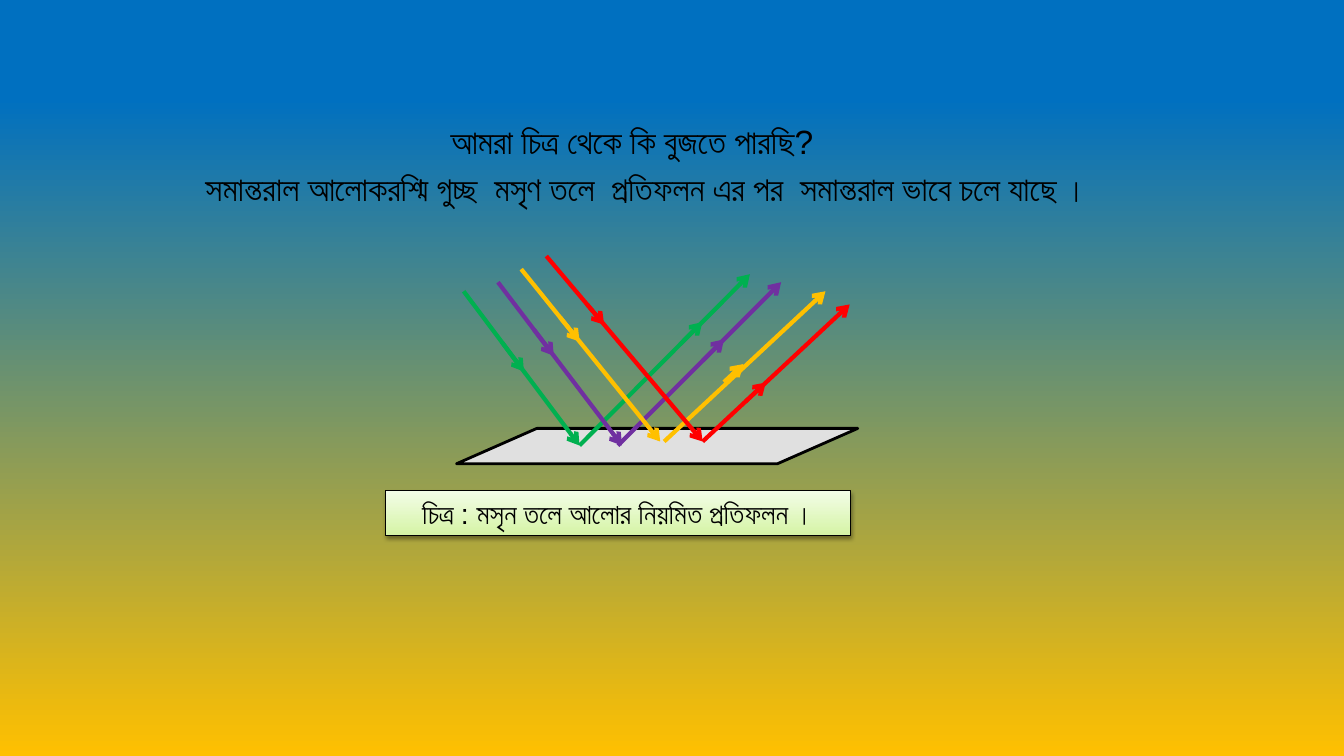
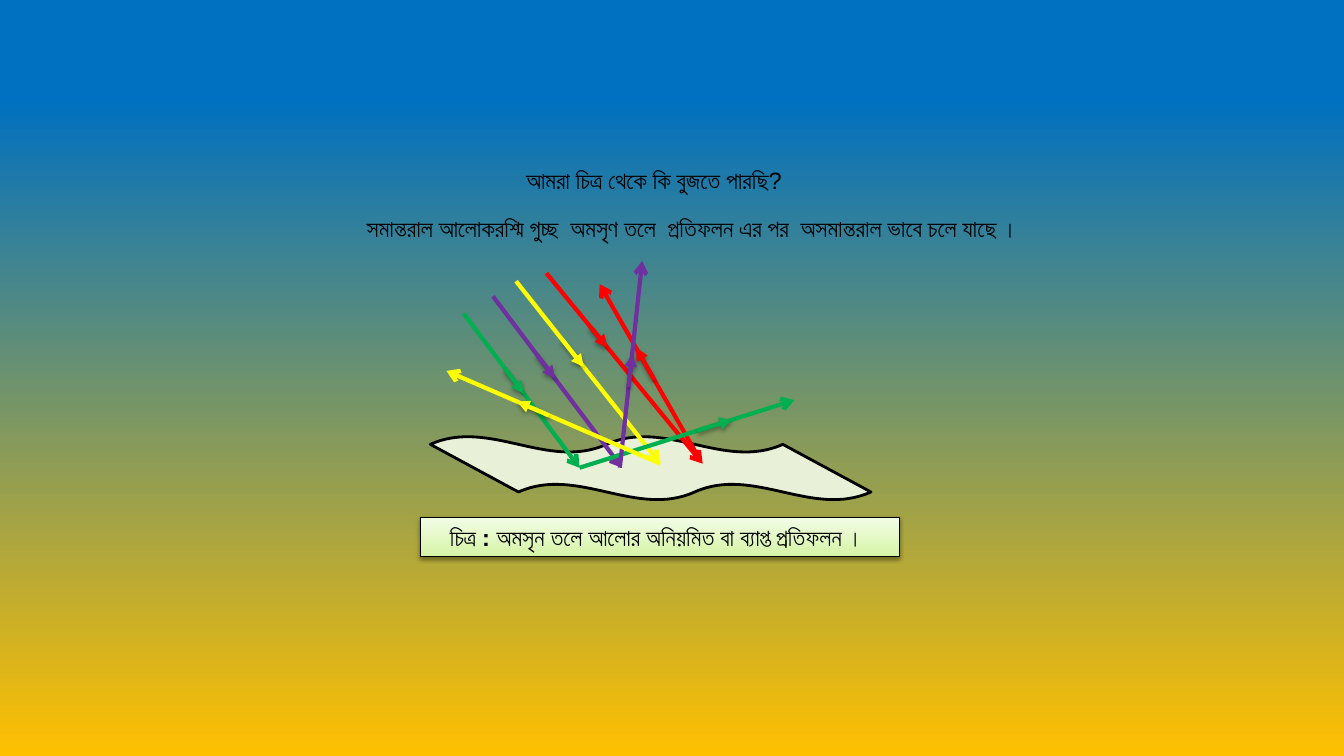
from dataclasses import dataclass

from lxml import etree
from pptx import Presentation
from pptx.dml.color import RGBColor
from pptx.enum.shapes import MSO_CONNECTOR, MSO_SHAPE
from pptx.enum.text import MSO_ANCHOR, MSO_AUTO_SIZE, PP_ALIGN
from pptx.oxml.ns import qn
from pptx.util import Inches, Pt

STRAIGHT = MSO_CONNECTOR.STRAIGHT
RECTANGLE = MSO_SHAPE.RECTANGLE
SMOOTH_PLATE = MSO_SHAPE.FLOWCHART_DATA
ROUGH_PLATE = MSO_SHAPE.DOUBLE_WAVE
LEFT, CENTER = PP_ALIGN.LEFT, PP_ALIGN.CENTER
MIDDLE = MSO_ANCHOR.MIDDLE
NO_FIT = MSO_AUTO_SIZE.NONE
TITLE_ONLY = 5

SLIDE_W, SLIDE_H = Inches(13.33), Inches(7.5)


@dataclass(frozen=True)
class Theme:
    font: str = "Arial"
    ink: str = "000000"
    sky: str = "0070C0"
    sun: str = "FFC000"
    caption_bottom: str = "D5F4A6"
    caption_top: str = "F3FDE7"
    smooth: str = "E0E0E0"
    rough: str = "E8F0D8"
    green: str = "00B050"
    purple: str = "7030A0"
    orange: str = "FFC000"
    red: str = "FF0000"
    yellow: str = "FFFF00"
    ray_width: float = 3
    plate_width: float = 2
    caption_width: float = 0.75
    large: float = 24
    medium: float = 20.3
    small: float = 16.9


THEME = Theme()


# Positions are percentages of the slide's width and height
@dataclass(frozen=True)
class Box:
    left: float
    top: float
    width: float
    height: float

    def emu(self) -> tuple:
        return (across(self.left), down(self.top),
                across(self.width), down(self.height))


@dataclass(frozen=True)
class Ray:
    color: str
    start: tuple
    end: tuple
    marker: tuple  # shares of the ray between which the marker arrow runs
    lift: float = 0  # upward shift of the marker

    def at(self, share: float, lift: float = 0) -> tuple:
        x, y = (a + (b - a) * share for a, b in zip(self.start, self.end))
        return x, y - lift


@dataclass(frozen=True)
class Reflection:
    question: str
    question_box: Box
    statement: str
    statement_box: Box
    text_size: float
    plate: int
    plate_color: str
    plate_box: Box
    caption: tuple  # (text, bold) pairs
    caption_box: Box
    caption_size: float
    rays: tuple
    marker_head: str
    marker_shadow: int  # opacity in percent, 0 for none


def across(share: float) -> int:
    return round(SLIDE_W * share / 100)


def down(share: float) -> int:
    return round(SLIDE_H * share / 100)


def rgb(color: str) -> RGBColor:
    return RGBColor.from_string(color)


def set_gradient(fill, stops: tuple, angle: int) -> None:
    fill.gradient()
    fill.gradient_angle = angle
    for stop, (position, color) in zip(fill.gradient_stops, stops):
        stop.position = position
        stop.color.rgb = rgb(color)


def set_shadow(properties, opacity: int) -> None:
    """Give a soft shadow below, or none when the opacity is zero."""
    effects = properties.find(qn("a:effectLst"))
    if effects is None:
        effects = etree.SubElement(properties, qn("a:effectLst"))
    if opacity:
        shadow = etree.SubElement(
            effects, qn("a:outerShdw"), blurRad=str(Pt(3.1)),
            dist=str(Pt(1.7)), dir="5400000", rotWithShape="0")
        black = etree.SubElement(shadow, qn("a:srgbClr"), val=THEME.ink)
        etree.SubElement(black, qn("a:alpha"), val=str(opacity * 1000))


def write(frame, parts: tuple, size: float, align: PP_ALIGN) -> None:
    frame.word_wrap = True
    frame.auto_size = NO_FIT
    frame.vertical_anchor = MIDDLE
    paragraph = frame.paragraphs[0]
    paragraph.alignment = align
    font = paragraph.font
    font.name, font.size = THEME.font, Pt(size)
    font.color.rgb = rgb(THEME.ink)
    for text, bold in parts:
        run = paragraph.add_run()
        run.text = text
        if bold:
            run.font.bold = True


def add_outlined(slide, kind: int, box: Box, width: float):
    shape = slide.shapes.add_shape(kind, *box.emu())
    shape.shadow.inherit = False
    shape.line.color.rgb = rgb(THEME.ink)
    shape.line.width = Pt(width)
    return shape


def add_arrow(slide, color: str, start: tuple, end: tuple,
              head: str = "arrow", shadow: int = 0) -> None:
    arrow = slide.shapes.add_connector(
        STRAIGHT, across(start[0]), down(start[1]),
        across(end[0]), down(end[1]))
    arrow.line.color.rgb = rgb(color)
    arrow.line.width = Pt(THEME.ray_width)
    etree.SubElement(arrow.line._get_or_add_ln(), qn("a:tailEnd"), type=head)
    set_shadow(arrow._element.spPr, shadow)


def draw(deck, scene: Reflection) -> None:
    slide = deck.slides.add_slide(deck.slide_layouts[TITLE_ONLY])

    # Question and its answer
    title = slide.shapes.title
    title.left, title.top, title.width, title.height = scene.question_box.emu()
    write(title.text_frame, ((scene.question, False),), scene.text_size, LEFT)
    statement = slide.shapes.add_textbox(*scene.statement_box.emu())
    write(statement.text_frame, ((scene.statement, False),),
          scene.text_size, LEFT)

    # Reflecting surface
    plate = add_outlined(slide, scene.plate, scene.plate_box, THEME.plate_width)
    plate.fill.solid()
    plate.fill.fore_color.rgb = rgb(scene.plate_color)
    if scene.plate == ROUGH_PLATE:
        plate.adjustments[0], plate.adjustments[1] = 0.125, 0.1

    # Caption
    caption = add_outlined(slide, RECTANGLE, scene.caption_box,
                           THEME.caption_width)
    set_gradient(caption.fill, ((0, THEME.caption_bottom),
                                (1, THEME.caption_top)), 90)
    set_shadow(caption._element.spPr, 38)
    write(caption.text_frame, scene.caption, scene.caption_size, CENTER)

    # Light rays, each with a marker arrow along it
    for ray in scene.rays:
        add_arrow(slide, ray.color, ray.start, ray.end)
        first, last = (ray.at(share, ray.lift) for share in ray.marker)
        add_arrow(slide, ray.color, first, last,
                  scene.marker_head, scene.marker_shadow)


QUESTION = "আমরা চিত্র থেকে কি বুজতে পারছি?"

REGULAR = Reflection(
    question=QUESTION,
    question_box=Box(32.78, 15.33, 32.4, 6.67),
    statement="সমান্তরাল আলোকরশ্মি গুচ্ছ  মসৃণ তলে  প্রতিফলন এর পর  "
              "সমান্তরাল ভাবে চলে যাছে ।",
    statement_box=Box(14.55, 21.47, 68.78, 6.67),
    text_size=THEME.large,
    plate=SMOOTH_PLATE,
    plate_color=THEME.smooth,
    plate_box=Box(33.97, 56.67, 29.85, 4.67),
    caption=((" চিত্র : মসৃন তলে আলোর নিয়মিত প্রতিফলন । ", False),),
    caption_box=Box(28.72, 64.93, 34.58, 5.87),
    caption_size=THEME.medium,
    rays=(
        Ray(THEME.green, (43.12, 58.93), (55.8, 36.27), (0.59, 0.72)),
        Ray(THEME.purple, (45.98, 58.93), (58.12, 37.33), (0.52, 0.65)),
        Ray(THEME.orange, (49.42, 58.4), (61.42, 38.53), (0.37, 0.49), 0.5),
        Ray(THEME.red, (52.28, 58.4), (63.22, 40.27), (0.29, 0.43)),
        Ray(THEME.green, (34.5, 38.53), (43.12, 58.93), (0.33, 0.52)),
        Ray(THEME.purple, (37.05, 37.33), (46.28, 58.93), (0.29, 0.45)),
        Ray(THEME.orange, (38.78, 35.6), (49.12, 58.4), (0.28, 0.42)),
        Ray(THEME.red, (40.65, 33.87), (52.28, 58.4), (0.26, 0.37)),
    ),
    marker_head="arrow",
    marker_shadow=0,
)

DIFFUSE = Reflection(
    question=QUESTION,
    question_box=Box(38.4, 21.2, 27.82, 5.2),
    statement="সমান্তরাল আলোকরশ্মি গুচ্ছ  অমসৃণ তলে  প্রতিফলন এর পর  "
              "অসমান্তরাল ভাবে চলে যাছে ।",
    statement_box=Box(26.55, 27.6, 52.72, 5.2),
    text_size=THEME.small,
    plate=ROUGH_PLATE,
    plate_color=THEME.rough,
    plate_box=Box(32.02, 57.73, 32.78, 8.4),
    caption=(("চিত্র ", False), (": ", True),
             ("অমসৃন তলে আলোর অনিয়মিত বা ব্যাপ্ত প্রতিফলন । ", False)),
    caption_box=Box(31.28, 68.4, 35.62, 5.2),
    caption_size=THEME.small,
    rays=(
        Ray(THEME.purple, (36.68, 39.2), (46.28, 61.87), (0.34, 0.48)),
        Ray(THEME.red, (52.12, 60.93), (44.62, 37.6), (0.46, 0.64)),
        Ray(THEME.yellow, (38.4, 37.2), (49.12, 61.33), (0.32, 0.47)),
        Ray(THEME.red, (40.65, 36.13), (52.28, 61.33), (0.28, 0.39)),
        Ray(THEME.green, (34.5, 41.47), (43.12, 61.87), (0.36, 0.52)),
        Ray(THEME.green, (43.12, 61.87), (59.1, 52.93), (0.55, 0.71)),
        Ray(THEME.purple, (46.12, 61.87), (47.78, 34.53), (0.39, 0.55)),
        Ray(THEME.yellow, (49.12, 61.33), (33.22, 49.07), (0.52, 0.67)),
    ),
    marker_head="triangle",
    marker_shadow=35,
)


def main() -> None:
    deck = Presentation()
    deck.slide_width, deck.slide_height = SLIDE_W, SLIDE_H
    # Shared backdrop
    set_gradient(deck.slide_master.background.fill,
                 ((0.13, THEME.sky), (1, THEME.sun)), 270)
    for scene in (REGULAR, DIFFUSE):
        draw(deck, scene)
    deck.save("out.pptx")


if __name__ == "__main__":
    main()
